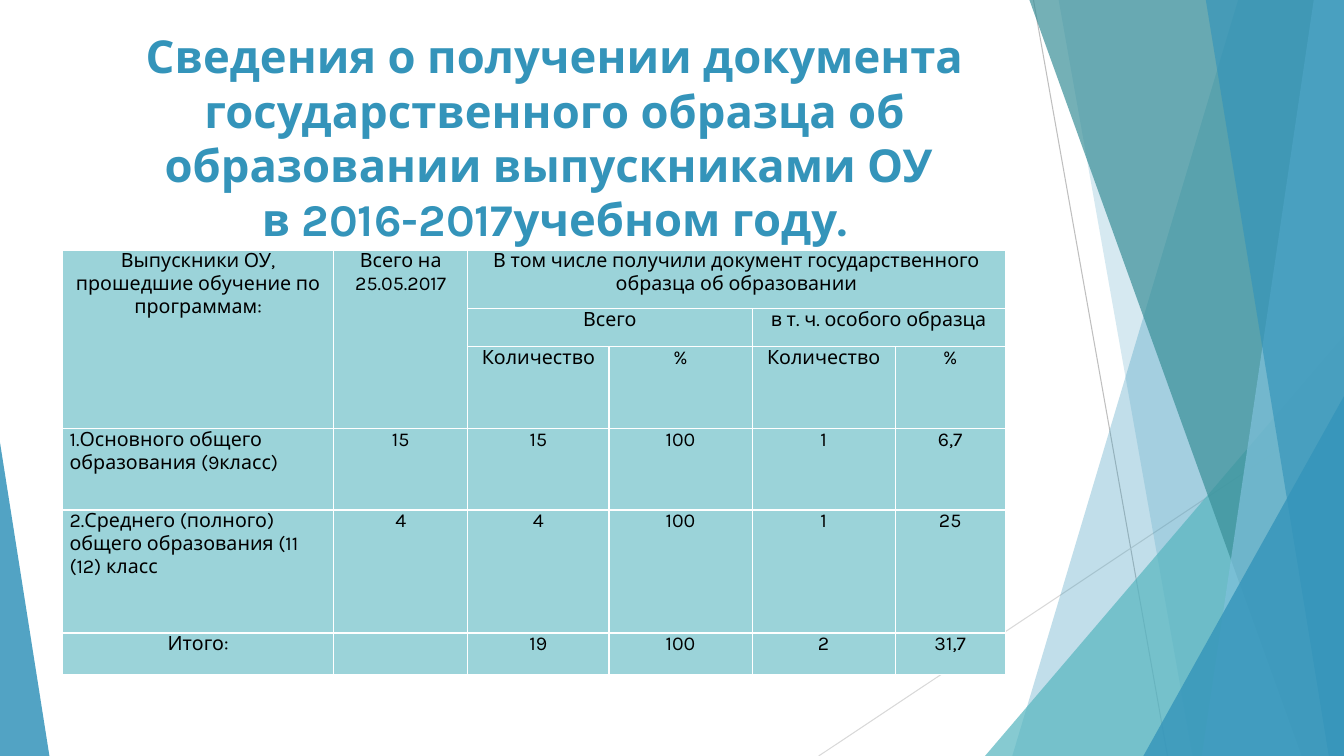
from lxml import etree
from pptx import Presentation
from pptx.dml.color import RGBColor
from pptx.enum.shapes import MSO_CONNECTOR as Connector, MSO_SHAPE as Shape
from pptx.enum.text import MSO_ANCHOR as Anchor, MSO_AUTO_SIZE as AutoSize, PP_ALIGN as Align
from pptx.oxml.ns import qn
from pptx.util import Pt

PX = 9144  # 100 px to the inch
SLIDE_W, SLIDE_H = 1333, 750
FONT = "Karla"
BLUE, TEAL, DARK_TEAL, SKY = "3494BA", "58B6C0", "3A8F98", "7FC1DB"
CELL_FILL, WHITE, BLACK = "9BD3D9", "FFFFFF", "000000"

# Facets: top left x, bottom left x, colour, opacity in percent
BACK_FACETS = [(1228, 1004, BLUE, 30), (1050, 1183, BLUE, 20)]
FRONT_FACETS = [(1021, 1291, DARK_TEAL, 70), (1303, 1192, SKY, 70), (1196, 1318, BLUE, 65)]

TITLE = ("Сведения о получении документа государственного образца об "
         "образовании выпускниками ОУ \vв 2016-2017учебном году.")

COLUMNS = [269, 133, 140, 142, 142, 109]
ROWS = [58, 38, 81, 81, 122, 41]
CELLS = [
    ["Выпускники ОУ, прошедшие обучение по программам:", "Всего на 25.05.2017",
     "В том числе получили документ государственного образца об образовании", "", "", ""],
    ["", "", "Всего", "", "в т. ч. особого образца", ""],
    ["", "", "Количество", "%", "Количество", "%"],
    ["1.Основного общего образования (9класс)", "15", "15", "100", "1", "6,7"],
    ["2.Среднего (полного) общего образования (11 (12) класс", "4", "4", "100", "1", "25"],
    ["Итого:", "", "19", "100", "2", "31,7"],
]
# Merged cells: first row, first column, last row, last column
MERGES = [(0, 0, 2, 0), (0, 1, 2, 1), (0, 2, 0, 5), (1, 2, 1, 3), (1, 4, 1, 5)]


def rgb(colour):
    return RGBColor.from_string(colour)


def write(frame, text, size, colour, bold=False, align=Align.CENTER):
    paragraph = frame.paragraphs[0]
    paragraph.text = text
    paragraph.alignment = align
    paragraph.line_spacing = 1.0
    for run in paragraph.runs:
        font = run.font
        font.name, font.size, font.bold = FONT, Pt(size), bold
        font.color.rgb = rgb(colour)


def paint(facet, colour, opacity):
    facet.shadow.inherit = False
    facet.line.fill.background()
    facet.fill.solid()
    facet.fill.fore_color.rgb = rgb(colour)
    solid = facet.fill._xPr.find(qn("a:solidFill"))
    etree.SubElement(solid[0], qn("a:alpha"), val=str(opacity * 1000))


def add_ray(slide, start, end, colour):
    ray = slide.shapes.add_connector(Connector.STRAIGHT, *(v * PX for v in start + end))
    ray.line.color.rgb = rgb(colour)
    ray.line.width = Pt(0.75)
    etree.SubElement(ray._element.spPr, qn("a:effectLst"))


def add_facet(slide, right, bottom, top_x, bottom_x, colour, opacity):
    outline = slide.shapes.build_freeform(top_x, 0, scale=PX)
    outline.add_line_segments([(right, 0), (right, bottom), (bottom_x, bottom)], close=True)
    paint(outline.convert_to_shape(), colour, opacity)


def add_triangle(slide, left, top, right, bottom, apex, colour, opacity):
    box = (left, top, right - left, bottom - top)
    triangle = slide.shapes.add_shape(Shape.ISOSCELES_TRIANGLE, *(v * PX for v in box))
    triangle.adjustments[0] = apex
    paint(triangle, colour, opacity)


def add_decor(slide, right, bottom):
    # Thin rays
    add_ray(slide, (1025, 0), (1158, bottom), "BFBFBF")
    add_ray(slide, (right, 403), (812, bottom), "D9D9D9")
    # Translucent facets on the right
    for facet in BACK_FACETS:
        add_facet(slide, right, bottom, *facet)
    add_triangle(slide, 977, 333, right, bottom, 1, TEAL, 72)
    for facet in FRONT_FACETS:
        add_facet(slide, right, bottom, *facet)
    add_triangle(slide, 1134, 393, right, bottom, 1, BLUE, 80)
    # Wedge on the left
    add_triangle(slide, 0, 439, 49, bottom, 0, BLUE, 85)


def add_title(slide, left, top, width, height):
    title = slide.shapes.title
    title.left, title.top, title.width, title.height = (
        v * PX for v in (left, top, width, height))
    frame = title.text_frame
    frame.word_wrap = True
    frame.auto_size = AutoSize.NONE
    frame.vertical_anchor = Anchor.TOP
    frame.margin_top = 5 * PX
    frame.margin_bottom = 0
    write(frame, TITLE, 32.4, BLUE, bold=True)


def style_cell(cell):
    cell.margin_left = cell.margin_right = 7 * PX
    cell.margin_top = cell.margin_bottom = 0
    cell.vertical_anchor = Anchor.TOP
    properties = cell._tc.get_or_add_tcPr()
    for side in ("lnL", "lnR", "lnT", "lnB"):
        border = etree.SubElement(properties, qn(f"a:{side}"), w=str(Pt(1)))
        solid = etree.SubElement(border, qn("a:solidFill"))
        etree.SubElement(solid, qn("a:srgbClr"), val=WHITE)
    cell.fill.solid()
    cell.fill.fore_color.rgb = rgb(CELL_FILL)


def add_results(slide, left, top):
    box = (left, top, sum(COLUMNS), sum(ROWS))
    results = slide.shapes.add_table(len(ROWS), len(COLUMNS), *(v * PX for v in box)).table
    results.first_row = results.horz_banding = False
    for column, width in zip(results.columns, COLUMNS):
        column.width = width * PX
    for row, height in zip(results.rows, ROWS):
        row.height = height * PX
    for r, texts in enumerate(CELLS):
        for c, text in enumerate(texts):
            cell = results.cell(r, c)
            style_cell(cell)
            programme = c == 0 and r in (3, 4)
            write(cell.text_frame, text, 14, BLACK,
                  align=Align.LEFT if programme else Align.CENTER)
    for r1, c1, r2, c2 in MERGES:
        results.cell(r1, c1).merge(results.cell(r2, c2))


def main():
    deck = Presentation()
    deck.slide_width, deck.slide_height = SLIDE_W * PX, SLIDE_H * PX
    slide = deck.slides.add_slide(deck.slide_layouts[5])
    add_decor(slide, SLIDE_W, SLIDE_H)
    add_title(slide, 47, 23, 1006, 214)
    add_results(slide, 62, 248)
    deck.save("out.pptx")


if __name__ == "__main__":
    main()
